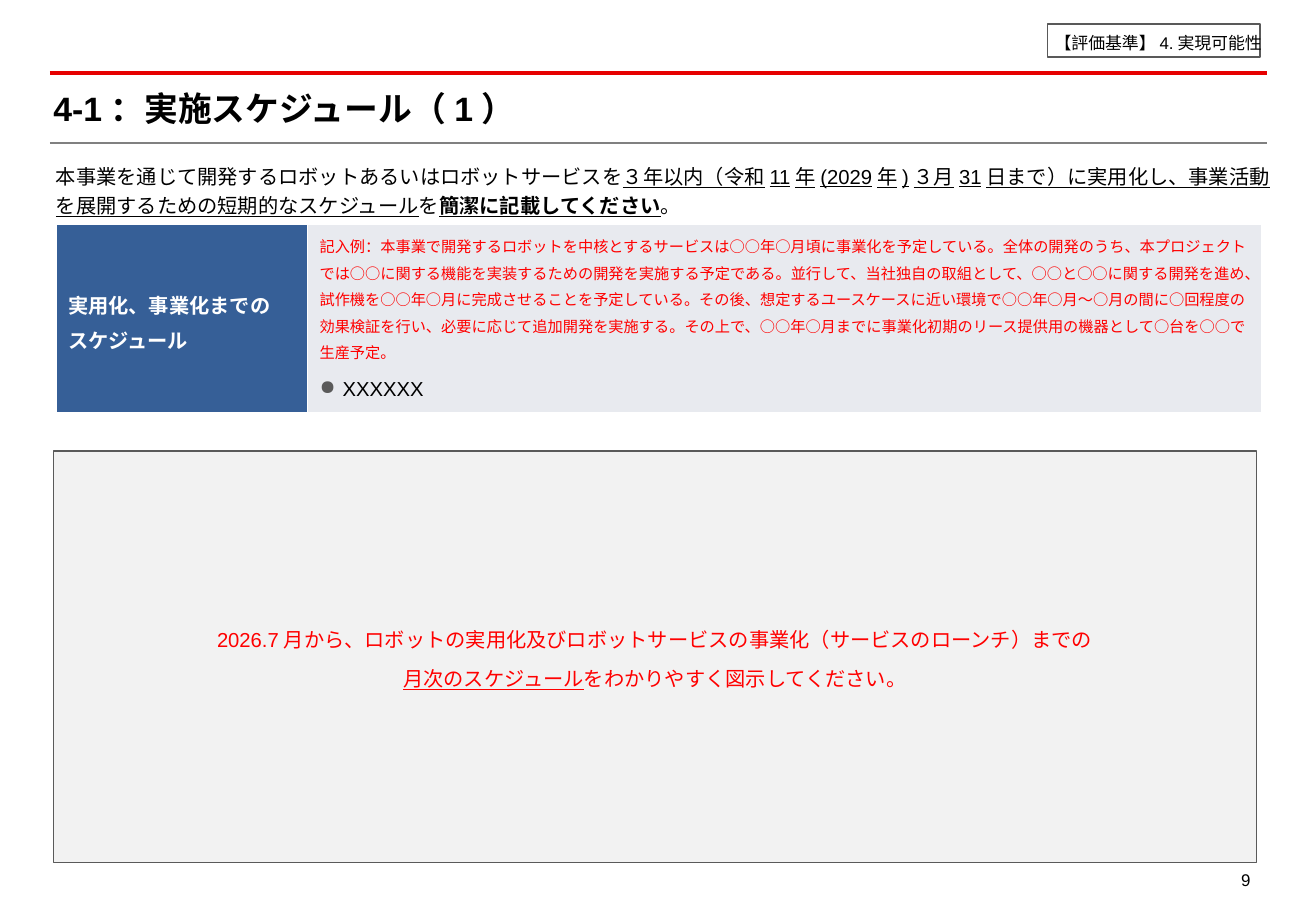
from lxml import etree
from pptx import Presentation
from pptx.dml.color import RGBColor
from pptx.enum.shapes import MSO_CONNECTOR as Connector, MSO_SHAPE as Preset
from pptx.enum.text import MSO_ANCHOR as Anchor, MSO_AUTO_SIZE as AutoSize, PP_ALIGN as Align
from pptx.oxml.ns import qn
from pptx.util import Inches, Pt

SIZE = Inches(10.83), Inches(7.5)
BLACK, WHITE, RED, BULLET_GREY = "000000", "FFFFFF", "FF0000", "5A5A5A"
TIGHT = Inches(0.02)
UNDERLINE = {"underline": True}

TITLE = ["4-1：実施スケジュール（1）"]
PAGE = ["9"]
CRITERION = ["【評価基準】4.実現可能性"]
GUIDANCE = [
    "本事業を通じて開発するロボットあるいはロボットサービスを",
    ("３年以内（令和11年(2029年)３月31日まで）に実用化し、事業活動を展開するための短期的なスケジュール", UNDERLINE),
    "を",
    ("簡潔に記載してください", {"bold": True, "underline": True}),
    "。",
]
CHART_NOTE = [
    ["2026.7月から、ロボットの実用化及びロボットサービスの事業化（サービスのローンチ）までの"],
    [("月次のスケジュール", UNDERLINE), "をわかりやすく図示してください。"],
]
ROW_HEADING = ["実用化、事業化までの", "\n", "スケジュール"]
EXAMPLE = [
    "記入例：本事業で開発するロボットを中核とするサービスは○○年○月頃に事業化を予定している。"
    "全体の開発のうち、本プロジェクトでは○○に関する機能を実装するための開発を実施する予定である。"
    "並行して、当社独自の取組として、○○と○○に関する開発を進め、試作機を○○年○月に完成させることを予定している。"
    "その後、想定するユースケースに近い環境で○○年○月～○月の間に○回程度の効果検証を行い、"
    "必要に応じて追加開発を実施する。その上で、○○年○月までに事業化初期のリース提供用の機器として○台を○○で生産予定。"
]
ANSWER = ["XXXXXX"]

RULES = [(3.79, 8, 96.25, "E60000", 2), (3.79, 15.73, 96.3, "808080", 1.25)]
AREAS = {
    "title": (4.06, 9.6, 91.5, 4.53),
    "guidance": (4.25, 17.47, 92.8, 6.13),
    "table": (4.25, 24.67, 91.6, 20.67),
    "chart": (4.06, 49.47, 91.41, 45.2),
    "criterion": (79.59, 2.67, 16.16, 3.6),
    "page": (91.69, 94.4, 4.06, 3.73),
}
COLUMN_WEIGHTS = 2.07, 7.85


def color(code):
    """Turn a hex string into a colour."""
    return RGBColor.from_string(code)


def place(shares):
    """Turn percentages of the slide's width and height into lengths."""
    return [round(SIZE[index % 2] * share / 100) for index, share in enumerate(shares)]


def assign(target, values):
    """Set each named attribute on the target."""
    for name, value in values.items():
        setattr(target, name, value)


def write(paragraph, runs, size, code=BLACK, bold=False, **layout):
    """Fill a paragraph with formatted runs."""
    assign(paragraph, {"line_spacing": 1.2, "space_before": Pt(0), "alignment": Align.LEFT, **layout})
    assign(paragraph.font, {"size": Pt(size), "name": "Arial"})
    for item in runs:
        if item == "\n":
            paragraph.add_line_break()
            continue
        text, extra = (item, {}) if isinstance(item, str) else item
        run = paragraph.add_run()
        run.text = text
        assign(run.font, {"size": Pt(size), "name": "Arial", "bold": bold, **extra})
        run.font.color.rgb = color(code)


def set_frame(shape, margin=0, anchor=Anchor.TOP, wrap=True):
    """Prepare a shape's text frame and return it."""
    frame = shape.text_frame
    assign(frame, {"word_wrap": wrap, "auto_size": AutoSize.NONE, "vertical_anchor": anchor})
    assign(frame, {f"margin_{side}": margin for side in ("left", "top", "right", "bottom")})
    return frame


def add_rule(slide, left, top, right, code, width):
    """Draw one horizontal rule across the slide."""
    line = slide.shapes.add_connector(Connector.STRAIGHT, *place((left, top, right, top)))
    line.line.color.rgb = color(code)
    line.line.width = Pt(width)
    etree.SubElement(line._element.spPr, qn("a:effectLst"))


def add_panel(slide, area, border, fill=None):
    """Draw an outlined rectangle and return its text frame."""
    panel = slide.shapes.add_shape(Preset.RECTANGLE, *place(AREAS[area]))
    panel.shadow.inherit = False
    panel.line.color.rgb = color(border)
    panel.line.width = Pt(1)
    if fill:
        panel.fill.solid()
        panel.fill.fore_color.rgb = color(fill)
    else:
        panel.fill.background()
    return set_frame(panel, TIGHT, Anchor.MIDDLE, wrap=False)


def add_bullet(paragraph, indent):
    """Give a paragraph a hanging bullet."""
    properties = paragraph._p.get_or_add_pPr()
    properties.set("marL", str(indent))
    properties.set("indent", str(-indent))
    bullet_color = etree.SubElement(properties, qn("a:buClr"))
    etree.SubElement(bullet_color, qn("a:srgbClr"), val=BULLET_GREY)
    etree.SubElement(properties, qn("a:buChar"), char="●")


def add_schedule_table(slide):
    """Build the table with the heading, the example and the answer."""
    left, top, width, height = place(AREAS["table"])
    table = slide.shapes.add_table(1, 2, left, top, width, height).table
    assign(table, {"first_row": False, "horz_banding": False})
    for column, weight in zip(table.columns, COLUMN_WEIGHTS):
        column.width = round(width * weight / sum(COLUMN_WEIGHTS))
    heading, content = table.cell(0, 0), table.cell(0, 1)
    for cell, code in ((heading, "365F97"), (content, "E8EAEF")):
        cell.fill.solid()
        cell.fill.fore_color.rgb = color(code)
    heading.vertical_anchor = Anchor.MIDDLE
    write(heading.text_frame.paragraphs[0], ROW_HEADING, 12, WHITE, bold=True)
    write(content.text_frame.paragraphs[0], EXAMPLE, 9, RED, space_after=Pt(6))
    answer = content.text_frame.add_paragraph()
    add_bullet(answer, Inches(0.19))
    write(answer, ANSWER, 12)


def main():
    """Build the slide and save it."""
    presentation = Presentation()
    assign(presentation, dict(zip(("slide_width", "slide_height"), SIZE)))
    slide = presentation.slides.add_slide(presentation.slide_layouts[5])
    for rule in RULES:
        add_rule(slide, *rule)

    title = slide.shapes.title
    assign(title, dict(zip(("left", "top", "width", "height"), place(AREAS["title"]))))
    frame = set_frame(title, anchor=Anchor.MIDDLE)
    write(frame.paragraphs[0], TITLE, 20, bold=True, line_spacing=1.0)

    guidance = set_frame(slide.shapes.add_textbox(*place(AREAS["guidance"])))
    write(guidance.paragraphs[0], GUIDANCE, 12)

    chart = add_panel(slide, "chart", BULLET_GREY, "F2F2F2")
    write(chart.paragraphs[0], CHART_NOTE[0], 12, RED, alignment=Align.CENTER)
    write(chart.add_paragraph(), CHART_NOTE[1], 12, RED, alignment=Align.CENTER, space_before=Pt(6))

    criterion = add_panel(slide, "criterion", "595959")
    criterion.margin_left = Inches(0.06)
    write(criterion.paragraphs[0], CRITERION, 10)

    add_schedule_table(slide)

    page = set_frame(slide.shapes.add_textbox(*place(AREAS["page"])), Inches(0.08), wrap=False)
    page.margin_top = Inches(0.05)
    write(page.paragraphs[0], PAGE, 10, alignment=Align.RIGHT)
    presentation.save("out.pptx")


if __name__ == "__main__":
    main()
